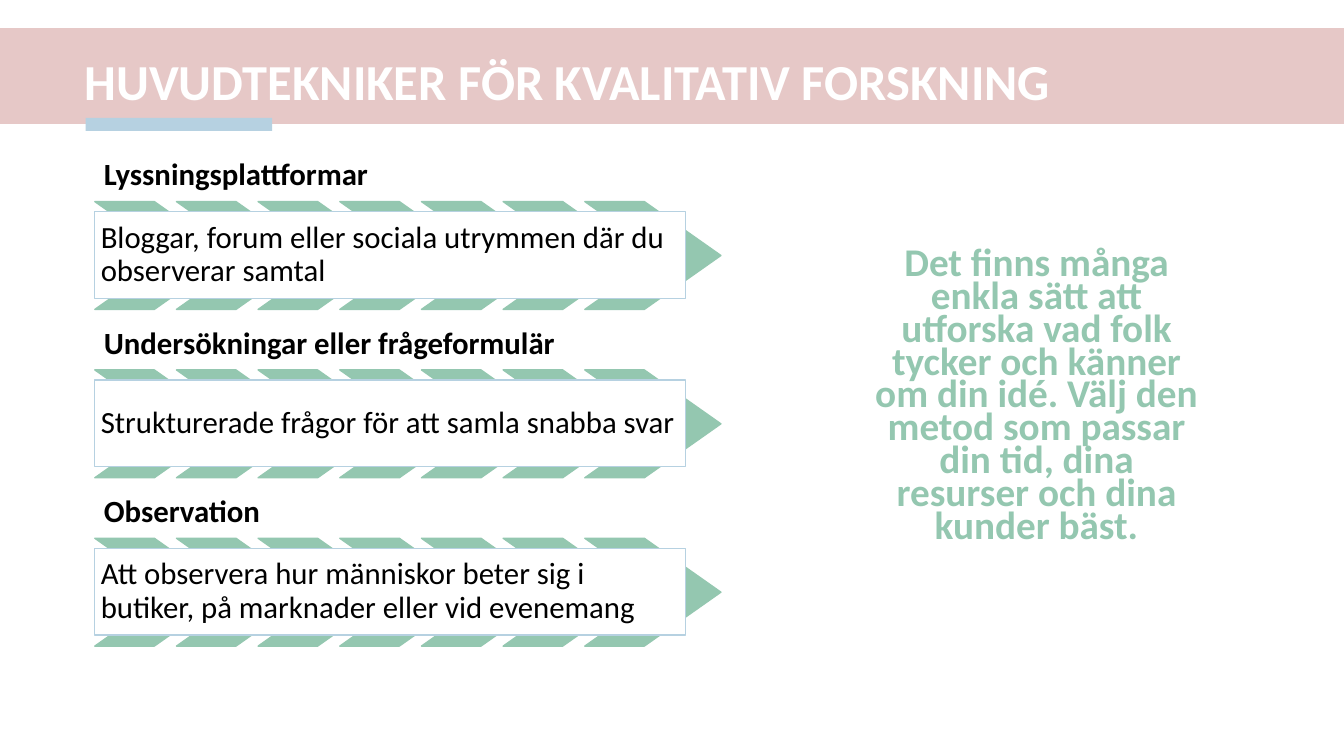
from dataclasses import dataclass

from pptx import Presentation
from pptx.dml.color import RGBColor
from pptx.enum.shapes import MSO_SHAPE
from pptx.enum.text import MSO_ANCHOR, PP_ALIGN
from pptx.shapes.autoshape import Shape
from pptx.slide import Slide
from pptx.util import Inches, Pt


@dataclass(frozen=True)
class Theme:
    font: str = "Calibri"
    rose: RGBColor = RGBColor(0xE6, 0xC8, 0xC7)
    blue: RGBColor = RGBColor(0xB6, 0xD1, 0xE1)
    green: RGBColor = RGBColor(0x94, 0xC7, 0xB0)
    white: RGBColor = RGBColor(0xFF, 0xFF, 0xFF)
    black: RGBColor = RGBColor(0, 0, 0)
    title_size: int = 36
    body_size: int = 22
    message_size: int = 28


@dataclass(frozen=True)
class Area:
    left: float
    top: float
    width: float
    height: float

    def emu(self) -> tuple[int, int, int, int]:
        return (Inches(self.left), Inches(self.top),
                Inches(self.width), Inches(self.height))


@dataclass(frozen=True)
class Technique:
    heading: str
    description: str


THEME = Theme()
TECHNIQUES = [
    Technique("Lyssningsplattformar",
              "Bloggar, forum eller sociala utrymmen där du observerar samtal"),
    Technique("Undersökningar eller frågeformulär",
              "Strukturerade frågor för att samla snabba svar"),
    Technique("Observation",
              "Att observera hur människor beter sig i butiker, "
              "på marknader eller vid evenemang"),
]
MESSAGE = ("Det finns många enkla sätt att utforska vad folk tycker och känner "
           "om din idé. Välj den metod som passar din tid, dina resurser och "
           "dina kunder bäst.")

LIST_LEFT, LIST_TOP, ROW_PITCH = 0.94, 1.47, 1.67
CHEVRON_COUNT, CHEVRON_PITCH = 7, 0.81


def add_filled(slide: Slide, kind: MSO_SHAPE, area: Area, fill: RGBColor,
               line: RGBColor | None = None) -> Shape:
    shape = slide.shapes.add_shape(kind, *area.emu())
    shape.shadow.inherit = False
    shape.fill.solid()
    shape.fill.fore_color.rgb = fill
    if line is None:
        shape.line.fill.background()
    else:
        shape.line.color.rgb = line
        shape.line.width = Pt(1)
    return shape


def write(shape: Shape, text: str, size: int, color: RGBColor, *,
          bold: bool = False, anchor: MSO_ANCHOR = MSO_ANCHOR.MIDDLE,
          align: PP_ALIGN = PP_ALIGN.LEFT, spacing: float | Pt = 0.9,
          inset: float | None = None) -> None:
    frame = shape.text_frame
    frame.word_wrap = True
    frame.vertical_anchor = anchor
    if inset is not None:
        frame.margin_left = frame.margin_right = Inches(inset)
        frame.margin_top = frame.margin_bottom = Inches(inset)
    paragraph = frame.paragraphs[0]
    paragraph.alignment = align
    paragraph.line_spacing = spacing
    run = paragraph.add_run()
    run.text = text
    run.font.name = THEME.font
    run.font.size = Pt(size)
    run.font.bold = bold
    run.font.color.rgb = color


def add_title(slide: Slide) -> None:
    add_filled(slide, MSO_SHAPE.RECTANGLE, Area(0, 0.28, 13.33, 0.95), THEME.rose)
    add_filled(slide, MSO_SHAPE.RECTANGLE, Area(0.85, 1.17, 1.85, 0.13), THEME.blue)
    title = slide.shapes.add_textbox(*Area(0.74, 0.44, 11.93, 0.79).emu())
    write(title, "HUVUDTEKNIKER FÖR KVALITATIV FORSKNING",
          THEME.title_size, THEME.white, bold=True)


def add_technique(slide: Slide, technique: Technique, top: float) -> None:
    heading = slide.shapes.add_textbox(*Area(LIST_LEFT, top, 5.79, 0.53).emu())
    write(heading, technique.heading, THEME.body_size, THEME.black,
          bold=True, anchor=MSO_ANCHOR.BOTTOM, inset=0.09)

    # Row of chevrons behind the description
    for step in range(CHEVRON_COUNT):
        area = Area(LIST_LEFT + step * CHEVRON_PITCH, top + 0.53, 1.35, 1.07)
        chevron = add_filled(slide, MSO_SHAPE.CHEVRON, area, THEME.green, THEME.green)
        chevron.adjustments[0] = 0.71

    description = add_filled(slide, MSO_SHAPE.RECTANGLE,
                             Area(LIST_LEFT, top + 0.63, 5.86, 0.86),
                             THEME.white, THEME.blue)
    write(description, technique.description, THEME.body_size, THEME.black, inset=0.06)


def main() -> None:
    deck = Presentation()
    deck.slide_width, deck.slide_height = Inches(13.33), Inches(7.5)
    slide = deck.slides.add_slide(deck.slide_layouts[6])

    add_title(slide)

    # Techniques on the left
    for row, technique in enumerate(TECHNIQUES):
        add_technique(slide, technique, LIST_TOP + row * ROW_PITCH)

    # Message on the right
    message = slide.shapes.add_textbox(*Area(8.55, 2.45, 3.46, 3.35).emu())
    write(message, MESSAGE, THEME.message_size, THEME.green, bold=True,
          anchor=MSO_ANCHOR.TOP, align=PP_ALIGN.CENTER, spacing=Pt(23.4))

    deck.save("out.pptx")


if __name__ == "__main__":
    main()
